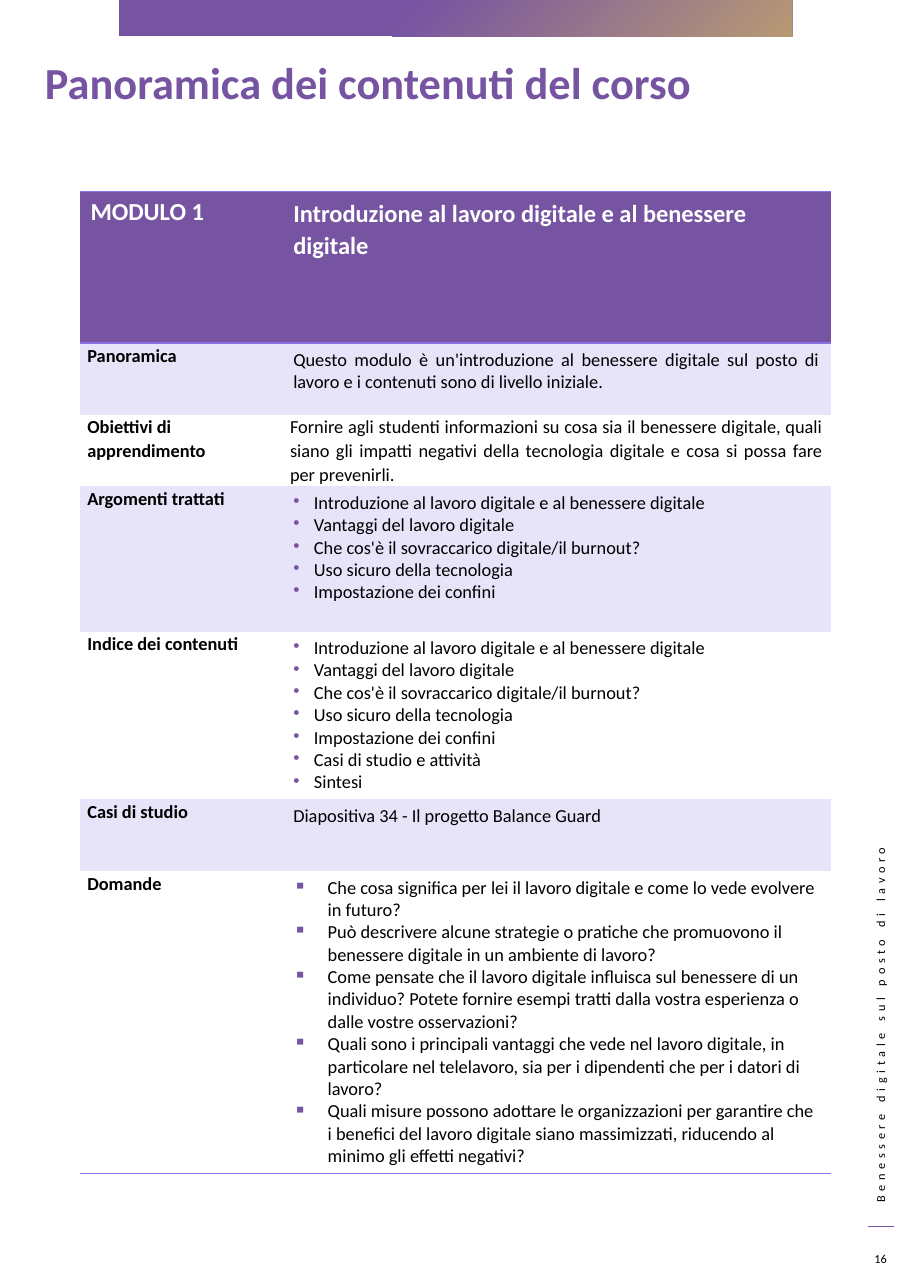
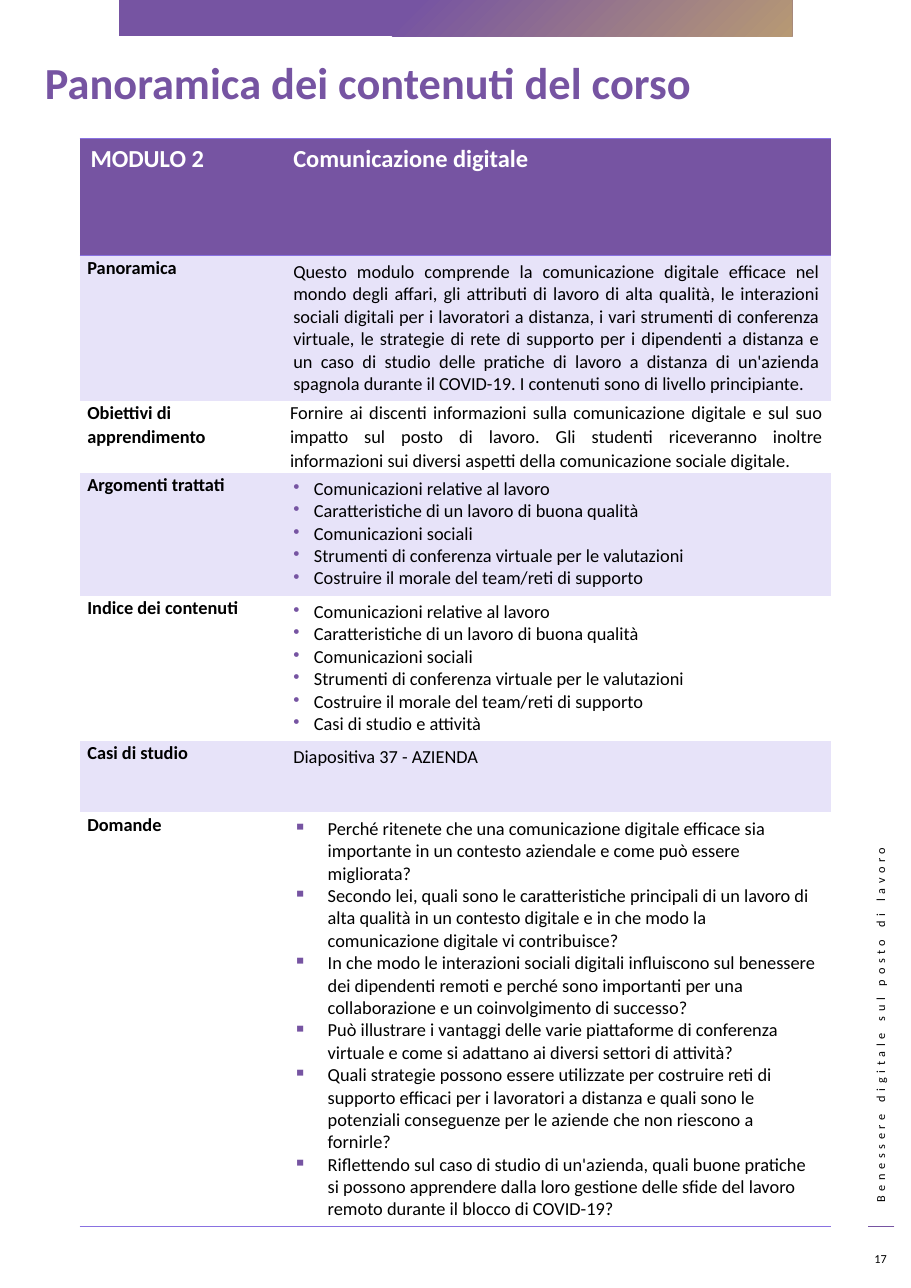
from lxml import etree
from pptx import Presentation
from pptx.dml.color import RGBColor
from pptx.enum import shapes, text
from pptx.oxml.ns import qn
from pptx.util import Pt

FONT = "Calibri"
PURPLE, VIOLET, LILAC, TAN = "7654A2", "8971E1", "E7E3F9", "B79974"
BLACK, WHITE = "000000", "FFFFFF"
TITLE = "Panoramica dei contenuti del corso"
SIDE_LABEL = "Benessere digitale sul posto di lavoro"
NO_GRID_STYLE = "{2D5ABB26-0587-4C30-8999-92F81FD0307C}"
LABELS = ["Panoramica", "Obiettivi di apprendimento", "Argomenti trattati",
          "Indice dei contenuti", "Casi di studio", "Domande"]
BULLETS = {"Argomenti trattati": ("•", 13.5), "Indice dei contenuti": ("•", 13.5),
           "Domande": ("▪", 22.5)}
JUSTIFIED = LABELS[:2]
TIGHT = "Obiettivi di apprendimento"

topics_1 = [
    "Introduzione al lavoro digitale e al benessere digitale",
    "Vantaggi del lavoro digitale",
    "Che cos'è il sovraccarico digitale/il burnout?",
    "Uso sicuro della tecnologia",
    "Impostazione dei confini",
]
topics_2 = [
    "Comunicazioni relative al lavoro",
    "Caratteristiche di un lavoro di buona qualità",
    "Comunicazioni sociali",
    "Strumenti di conferenza virtuale per le valutazioni",
    "Costruire il morale del team/reti di supporto",
]
modules = [
    {
        "number": "16", "top": 125.2, "header": "MODULO 1", "header_spacing": 1.07,
        "name": "Introduzione al lavoro digitale e al benessere digitale",
        "heights": [99, 46.8, 46.8, 95, 109.7, 46.8, 197.5],
        "contents": [
            ["Questo modulo è un'introduzione al benessere digitale sul posto di lavoro "
             "e i contenuti sono di livello iniziale."],
            ["Fornire agli studenti informazioni su cosa sia il benessere digitale, quali "
             "siano gli impatti negativi della tecnologia digitale e cosa si possa fare "
             "per prevenirli."],
            topics_1,
            topics_1 + ["Casi di studio e attività", "Sintesi"],
            ["Diapositiva 34 - Il progetto Balance Guard"],
            ["Che cosa significa per lei il lavoro digitale e come lo vede evolvere in futuro?",
             "Può descrivere alcune strategie o pratiche che promuovono il benessere "
             "digitale in un ambiente di lavoro?",
             "Come pensate che il lavoro digitale influisca sul benessere di un individuo? "
             "Potete fornire esempi tratti dalla vostra esperienza o dalle vostre osservazioni?",
             "Quali sono i principali vantaggi che vede nel lavoro digitale, in particolare "
             "nel telelavoro, sia per i dipendenti che per i datori di lavoro?",
             "Quali misure possono adottare le organizzazioni per garantire che i benefici "
             "del lavoro digitale siano massimizzati, riducendo al minimo gli effetti negativi?"],
        ],
    },
    {
        "number": "17", "top": 90.6, "header": "MODULO 2", "header_spacing": 1.0,
        "name": "Comunicazione digitale",
        "heights": [76.4, 95, 46.8, 80.4, 95, 46.8, 270.7],
        "contents": [
            ["Questo modulo comprende la comunicazione digitale efficace nel mondo degli "
             "affari, gli attributi di lavoro di alta qualità, le interazioni sociali "
             "digitali per i lavoratori a distanza, i vari strumenti di conferenza virtuale, "
             "le strategie di rete di supporto per i dipendenti a distanza e un caso di "
             "studio delle pratiche di lavoro a distanza di un'azienda spagnola durante il "
             "COVID-19. I contenuti sono di livello principiante."],
            ["Fornire ai discenti informazioni sulla comunicazione digitale e sul suo "
             "impatto sul posto di lavoro. Gli studenti riceveranno inoltre informazioni "
             "sui diversi aspetti della comunicazione sociale digitale."],
            topics_2,
            topics_2 + ["Casi di studio e attività"],
            ["Diapositiva 37 - AZIENDA"],
            ["Perché ritenete che una comunicazione digitale efficace sia importante in un "
             "contesto aziendale e come può essere migliorata?",
             "Secondo lei, quali sono le caratteristiche principali di un lavoro di alta "
             "qualità in un contesto digitale e in che modo la comunicazione digitale vi "
             "contribuisce?",
             "In che modo le interazioni sociali digitali influiscono sul benessere dei "
             "dipendenti remoti e perché sono importanti per una collaborazione e un "
             "coinvolgimento di successo?",
             "Può illustrare i vantaggi delle varie piattaforme di conferenza virtuale e "
             "come si adattano ai diversi settori di attività?",
             "Quali strategie possono essere utilizzate per costruire reti di supporto "
             "efficaci per i lavoratori a distanza e quali sono le potenziali conseguenze "
             "per le aziende che non riescono a fornirle?",
             "Riflettendo sul caso di studio di un'azienda, quali buone pratiche si possono "
             "apprendere dalla loro gestione delle sfide del lavoro remoto durante il blocco "
             "di COVID-19?"],
        ],
    },
]


def color(hex_string):
    return RGBColor.from_string(hex_string)


def write(frame, lines, size, ink=BLACK, bold=False, bullet=None):
    """Fill a text frame, one paragraph a line; bullet is (symbol, indent)."""
    frame.word_wrap = True
    frame.text = "\n".join(lines)
    for para in frame.paragraphs:
        if bullet:
            symbol, indent = bullet
            props = para._p.get_or_add_pPr()
            props.set("marL", str(Pt(indent)))
            props.set("indent", str(-Pt(indent)))
            tint = etree.SubElement(props, qn("a:buClr"))
            etree.SubElement(tint, qn("a:srgbClr"), val=PURPLE)
            etree.SubElement(props, qn("a:buChar"), char=symbol)
        for span in para.runs:
            span.font.name = FONT
            span.font.size = Pt(size)
            span.font.bold = bold
            span.font.color.rgb = color(ink)


deck = Presentation()
deck.slide_width, deck.slide_height = Pt(595.44), Pt(841.68)

for module in modules:
    page = deck.slides.add_slide(deck.slide_layouts[6])

    # Side label, rule and top band
    box = page.shapes.add_textbox(Pt(450.7), Pt(663.1), Pt(249.8), Pt(17.3))
    box.rotation = 270
    write(box.text_frame, [SIDE_LABEL], 8)
    para = box.text_frame.paragraphs[0]
    para.alignment = text.PP_ALIGN.RIGHT
    para.runs[0].font._element.set("spc", "300")

    rule = page.shapes.add_connector(
        shapes.MSO_CONNECTOR.STRAIGHT, Pt(584.6), Pt(801.5), Pt(567.4), Pt(801.5))
    rule.line.color.rgb = color(PURPLE)
    rule.line.width = Pt(0.75)
    etree.SubElement(rule._element.spPr, qn("a:effectLst"))

    band = page.shapes.add_shape(
        shapes.MSO_SHAPE.RECTANGLE, Pt(77.8), 0, Pt(439.9), Pt(23.8))
    band.shadow.inherit = False
    band.line.fill.background()
    band.fill.gradient()
    for stop, hue, position in zip(band.fill.gradient_stops, (TAN, PURPLE), (0, 0.58)):
        stop.color.rgb = color(hue)
        stop.position = position
    linear = band._element.spPr.find(".//" + qn("a:lin"))
    radial = etree.Element(qn("a:path"), attrib={"path": "circle"})
    etree.SubElement(radial, qn("a:fillToRect"), l="100000", t="100000")
    linear.getparent().replace(linear, radial)

    # Title and page number
    box = page.shapes.add_textbox(Pt(22.3), Pt(32.5), Pt(512), Pt(58.3))
    write(box.text_frame, [TITLE], 29, PURPLE, True)

    box = page.shapes.add_textbox(Pt(561.6), Pt(812.2), Pt(28), Pt(20.9))
    write(box.text_frame, [module["number"]], 8)
    box.text_frame.vertical_anchor = text.MSO_ANCHOR.MIDDLE
    box.text_frame.paragraphs[0].alignment = text.PP_ALIGN.CENTER

    # Module table
    heights = module["heights"]
    frame = page.shapes.add_table(
        len(heights), 2, Pt(52), Pt(module["top"]), Pt(491), Pt(sum(heights)))
    table = frame.table
    table.first_row = table.horz_banding = False
    table._tbl.tblPr.find(qn("a:tableStyleId")).text = NO_GRID_STYLE
    table.columns[0].width, table.columns[1].width = Pt(132.5), Pt(358.5)

    for index, height in enumerate(heights):
        table.rows[index].height = Pt(height)
        sides = {0: ("a:lnT", "a:lnB"), len(heights) - 1: ("a:lnB",)}.get(index, ())
        for cell in table.rows[index].cells:
            for side in sides:
                edge = etree.SubElement(
                    cell._tc.get_or_add_tcPr(), qn(side), w=str(Pt(1)))
                paint = etree.SubElement(edge, qn("a:solidFill"))
                etree.SubElement(paint, qn("a:srgbClr"), val=VIOLET)
            if index == 0 or index % 2:
                cell.fill.solid()
                cell.fill.fore_color.rgb = color(LILAC if index else PURPLE)
            else:
                cell.fill.background()

    write(table.cell(0, 0).text_frame, [module["header"]], 16, WHITE, True)
    write(table.cell(0, 1).text_frame, [module["name"]], 16, WHITE, True)
    table.cell(0, 1).text_frame.paragraphs[0].line_spacing = module["header_spacing"]

    for index, (label, lines) in enumerate(zip(LABELS, module["contents"]), start=1):
        name_cell, content_cell = table.rows[index].cells
        write(name_cell.text_frame, [label], 12, bold=True)
        write(content_cell.text_frame, lines, 12, bullet=BULLETS.get(label))
        if label in JUSTIFIED:
            content_cell.text_frame.paragraphs[0].alignment = text.PP_ALIGN.JUSTIFY
        for cell in (name_cell, content_cell) if label == TIGHT else (name_cell,):
            cell.margin_left = cell.margin_right = Pt(5.1)
            cell.margin_top = cell.margin_bottom = 0
            para = cell.text_frame.paragraphs[0]
            para.line_spacing = 1.07
            para.space_after = Pt(8)

deck.save("out.pptx")
